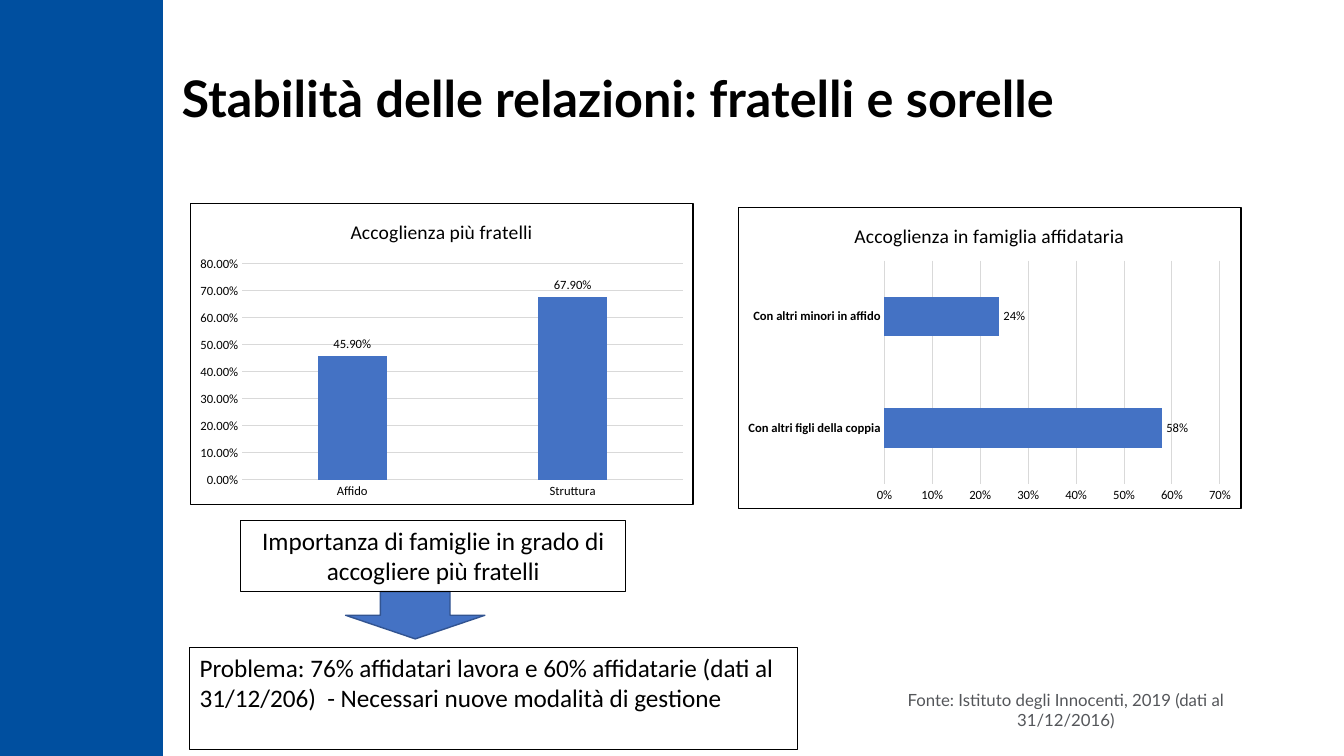
"""Build the slide on stable relationships between brothers and sisters."""
import dataclasses
import typing

import lxml.etree
import pptx
import pptx.chart.data
import pptx.dml.color
import pptx.enum.chart
import pptx.enum.shapes
import pptx.enum.text
import pptx.oxml
import pptx.oxml.ns
import pptx.util

Cm = pptx.util.Cm
Pt = pptx.util.Pt
Rgb = pptx.dml.color.RGBColor.from_string
Align = pptx.enum.text.PP_ALIGN
Anchor = pptx.enum.text.MSO_ANCHOR
ChartType = pptx.enum.chart.XL_CHART_TYPE
Preset = pptx.enum.shapes.MSO_SHAPE


@dataclasses.dataclass(frozen=True)
class Theme:
    """Colours, fonts and type sizes."""
    sidebar: str = "004F9F"
    accent: str = "4472C4"
    accent_edge: str = "325491"
    ink: str = "000000"
    paper: str = "FFFFFF"
    grid: str = "D9D9D9"
    muted: str = "54565A"
    display_font: str = "Lato"
    text_font: str = "Calibri"
    title_size: float = 36
    body_size: float = 18
    chart_title_size: float = 14
    source_size: float = 12
    label_size: float = 9


THEME = Theme()


@dataclasses.dataclass(frozen=True)
class Area:
    """Position and size in centimetres."""
    left: float
    top: float
    width: float
    height: float

    def lengths(self) -> tuple:
        """Return the four lengths in the order python-pptx takes them."""
        return tuple(Cm(length) for length in dataclasses.astuple(self))


@dataclasses.dataclass(frozen=True)
class ChartPanel:
    """One framed chart with a single series."""
    area: Area
    kind: ChartType
    title: str
    shares: dict[str, float]
    number_format: str
    top_value: float
    gap: int
    overlap: int = 0
    bold_categories: bool = False


@dataclasses.dataclass(frozen=True)
class Note:
    """One text box, framed or plain."""
    area: Area
    text: str
    align: Align
    font: str = THEME.text_font
    size: float = THEME.body_size
    color: str = THEME.ink
    framed: bool = True


@dataclasses.dataclass(frozen=True)
class Block:
    """One filled preset shape."""
    area: Area
    preset: Preset
    fill: str
    edge: str


TITLE = "Stabilità delle relazioni: fratelli e sorelle"
TITLE_AREA = Area(4.32, 0.41, 28.07, 4.29)
BLOCKS = (
    Block(Area(0, 0, 4.09, 19.05), Preset.RECTANGLE, THEME.sidebar, THEME.sidebar),
    Block(Area(8.71, 14.91, 3.51, 1.19), Preset.DOWN_ARROW, THEME.accent, THEME.accent_edge),
)
PANELS = (
    ChartPanel(Area(18.59, 5.21, 12.7, 7.62), ChartType.BAR_CLUSTERED,
               "Accoglienza in famiglia affidataria",
               {"Con altri figli della coppia": 0.58, "Con altri minori in affido": 0.24},
               "0%", 0.7, 182, bold_categories=True),
    ChartPanel(Area(4.78, 5.11, 12.7, 7.62), ChartType.COLUMN_CLUSTERED,
               "Accoglienza più fratelli", {"Affido": 0.459, "Struttura": 0.679},
               "0.00%", 0.8, 219, overlap=-27),
)
NOTES = (
    Note(Area(6.07, 13.11, 9.7, 1.8),
         "Importanza di famiglie in grado di accogliere più fratelli", Align.CENTER),
    Note(Area(4.78, 16.31, 15.32, 2.57),
         "Problema: 76% affidatari lavora e 60% affidatarie (dati al 31/12/206)"
         "  - Necessari nuove modalità di gestione", Align.LEFT),
    Note(Area(22.23, 17.25, 9.27, 1.27),
         "Fonte: Istituto degli Innocenti, 2019 (dati al 31/12/2016)", Align.CENTER,
         THEME.display_font, THEME.source_size, THEME.muted, framed=False),
)


def apply(target: typing.Any, values: dict[str, typing.Any]) -> None:
    """Set every attribute listed in values."""
    for name, value in values.items():
        setattr(target, name, value)


def style_font(font: typing.Any, family: str, size: float, color: str, bold: bool = False) -> None:
    """Format a font."""
    apply(font, {"name": family, "size": Pt(size), "bold": bold})
    font.color.rgb = Rgb(color)


def style_line(line: typing.Any, color: str, width: float) -> None:
    """Format an outline, axis line or gridline."""
    line.color.rgb = Rgb(color)
    line.width = Pt(width)


def style_fill(fill: typing.Any, color: str) -> None:
    """Give a solid fill."""
    fill.solid()
    fill.fore_color.rgb = Rgb(color)


def frame_chart(chart: typing.Any) -> None:
    """Fill and outline the chart area."""
    frame = pptx.oxml.parse_xml(
        f'<c:spPr {pptx.oxml.ns.nsdecls("c", "a")}>'
        f'<a:solidFill><a:srgbClr val="{THEME.paper}"/></a:solidFill>'
        f'<a:ln w="{Pt(1)}"><a:solidFill><a:srgbClr val="{THEME.ink}"/></a:solidFill></a:ln>'
        '</c:spPr>')
    chart.element.find(pptx.oxml.ns.qn("c:chart")).addnext(frame)


def draw_chart(slide: typing.Any, panel: ChartPanel) -> None:
    """Draw one chart panel."""
    data = pptx.chart.data.CategoryChartData(number_format=panel.number_format)
    data.categories = list(panel.shares)
    data.add_series("Series 1", list(panel.shares.values()))
    chart = slide.shapes.add_chart(panel.kind, *panel.area.lengths(), data).chart
    style_font(chart.font, THEME.text_font, THEME.label_size, THEME.ink)
    frame_chart(chart)
    apply(chart, {"has_legend": False, "has_title": True})
    heading = chart.chart_title.text_frame
    heading.text = panel.title
    style_font(heading.paragraphs[0].runs[0].font, THEME.text_font,
               THEME.chart_title_size, THEME.ink)

    categories, values = chart.category_axis, chart.value_axis
    no_tick = pptx.enum.chart.XL_TICK_MARK.NONE
    for axis, bold in ((categories, panel.bold_categories), (values, False)):
        apply(axis, {"major_tick_mark": no_tick, "minor_tick_mark": no_tick})
        style_font(axis.tick_labels.font, THEME.text_font, THEME.label_size, THEME.ink, bold)
    categories.has_major_gridlines = False
    style_line(categories.format.line, THEME.grid, 0.75)
    apply(values, {"minimum_scale": 0, "maximum_scale": panel.top_value,
                   "major_unit": 0.1, "has_major_gridlines": True})
    values.format.line.fill.background()
    style_line(values.major_gridlines.format.line, THEME.grid, 0.75)

    plot = chart.plots[0]
    apply(plot, {"gap_width": panel.gap, "overlap": panel.overlap,
                 "vary_by_categories": False, "has_data_labels": True})
    style_fill(plot.series[0].format.fill, THEME.accent)
    number = {"number_format": panel.number_format, "number_format_is_linked": False}
    apply(values.tick_labels, number)
    apply(plot.data_labels, number | {
        "show_value": True, "position": pptx.enum.chart.XL_LABEL_POSITION.OUTSIDE_END})
    style_font(plot.data_labels.font, THEME.text_font, THEME.label_size, THEME.ink)


def draw_note(slide: typing.Any, note: Note) -> None:
    """Draw one text box."""
    box = slide.shapes.add_textbox(*note.area.lengths())
    apply(box.text_frame, {"word_wrap": True, "text": note.text, "vertical_anchor": Anchor.TOP})
    paragraph = box.text_frame.paragraphs[0]
    paragraph.alignment = note.align
    style_font(paragraph.runs[0].font, note.font, note.size, note.color)
    if note.framed:
        style_line(box.line, THEME.ink, 0.75)


def draw_block(slide: typing.Any, block: Block) -> None:
    """Draw one filled shape."""
    shape = slide.shapes.add_shape(block.preset, *block.area.lengths())
    shape.shadow.inherit = False
    style_fill(shape.fill, block.fill)
    style_line(shape.line, block.edge, 1)


def draw_title(slide: typing.Any) -> None:
    """Place and format the title placeholder."""
    title = slide.shapes.title
    apply(title, dict(zip(("left", "top", "width", "height"), TITLE_AREA.lengths())))
    apply(title.text_frame, {"text": TITLE, "word_wrap": True, "vertical_anchor": Anchor.MIDDLE,
                             "auto_size": pptx.enum.text.MSO_AUTO_SIZE.NONE})
    paragraph = title.text_frame.paragraphs[0]
    apply(paragraph, {"alignment": Align.LEFT, "line_spacing": 0.9})
    style_font(paragraph.runs[0].font, THEME.display_font, THEME.title_size, THEME.ink, True)


def main() -> None:
    """Build and save the presentation."""
    deck = pptx.Presentation()
    apply(deck, {"slide_width": Cm(33.87), "slide_height": Cm(19.05)})
    slide = deck.slides.add_slide(deck.slide_layouts[5])
    draw_title(slide)
    for draw, parts in ((draw_block, BLOCKS), (draw_chart, PANELS), (draw_note, NOTES)):
        for part in parts:
            draw(slide, part)
    deck.save("out.pptx")


if __name__ == "__main__":
    main()
